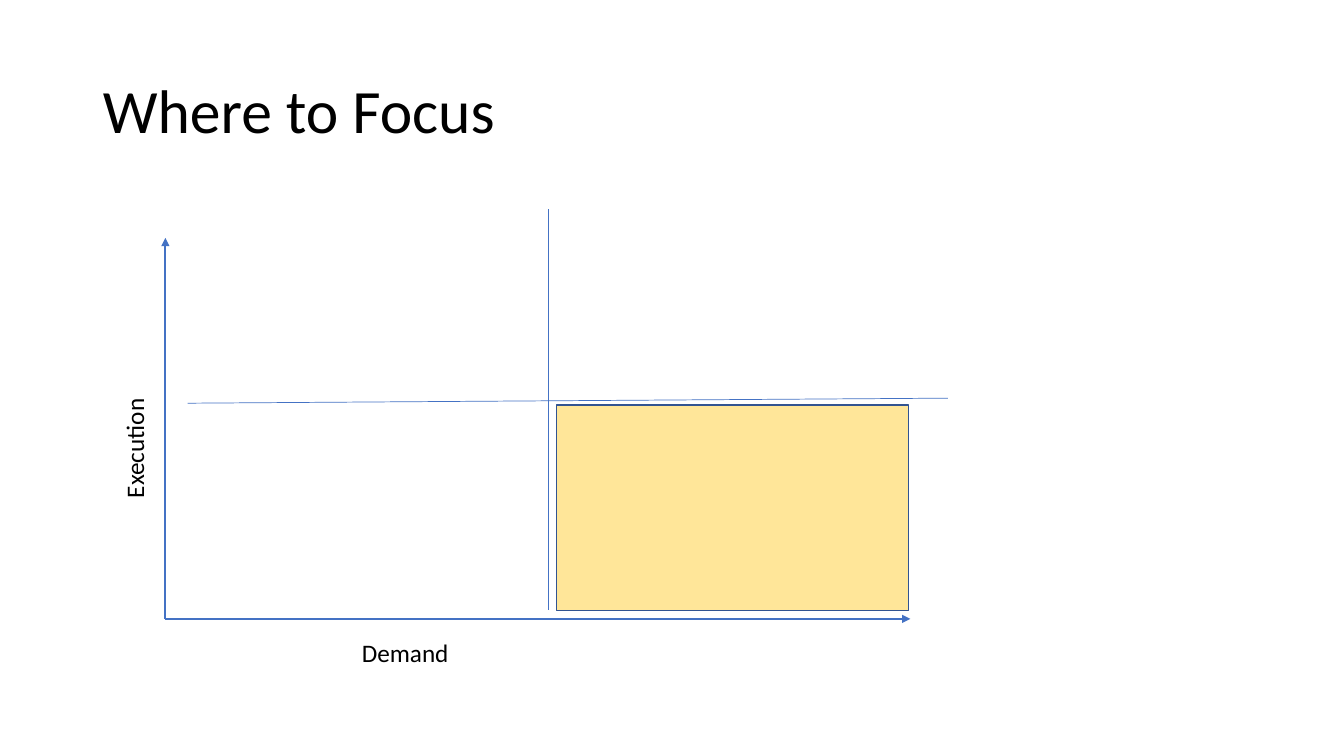
from lxml import etree
from pptx import Presentation
from pptx.dml.color import RGBColor
from pptx.enum.shapes import MSO_CONNECTOR, MSO_SHAPE
from pptx.enum.text import MSO_ANCHOR, PP_ALIGN
from pptx.oxml.ns import qn
from pptx.util import Inches, Pt

STRAIGHT = MSO_CONNECTOR.STRAIGHT
RECTANGLE = MSO_SHAPE.RECTANGLE
MIDDLE = MSO_ANCHOR.MIDDLE
LEFT = PP_ALIGN.LEFT

BLACK = RGBColor(0x00, 0x00, 0x00)
BLUE = RGBColor(0x44, 0x72, 0xC4)
DARK_BLUE = RGBColor(0x32, 0x54, 0x91)
YELLOW = RGBColor(0xFF, 0xE6, 0x99)
FONT = "Calibri"

# Chart frame, in inches
AXIS_X, AXIS_Y = 1.64, 6.14
AXIS_RIGHT, AXIS_TOP = 9.03, 2.36
DIVIDER_X, DIVIDER_Y = 5.44, 4.0
GAP = 0.08
LABEL_WIDTH, LABEL_HEIGHT = 3.18, 0.4


def style_text(paragraph, size):
    paragraph.alignment = LEFT
    paragraph.font.name = FONT
    paragraph.font.size = Pt(size)
    paragraph.font.color.rgb = BLACK


prs = Presentation()
prs.slide_width = Inches(13.33)
prs.slide_height = Inches(7.5)
slide = prs.slides.add_slide(prs.slide_layouts[5])

title = slide.shapes.title
title.left, title.top = Inches(0.92), Inches(0.4)
title.width, title.height = Inches(11.5), Inches(1.45)
title.text_frame.text = "Where to Focus"
title.text_frame.vertical_anchor = MIDDLE
title.text_frame.paragraphs[0].line_spacing = 0.9
style_text(title.text_frame.paragraphs[0], 44)

# Axes carry arrowheads; the thin quadrant dividers do not
for x1, y1, x2, y2, weight, has_arrow in (
    (AXIS_X, AXIS_Y, AXIS_RIGHT, AXIS_Y, 1.5, True),
    (AXIS_X, AXIS_Y, AXIS_X, AXIS_TOP, 1.5, True),
    (DIVIDER_X, 6.05, DIVIDER_X, 2.07, 0.5, False),
    (1.86, DIVIDER_Y, 9.4, 3.95, 0.5, False),
):
    line = slide.shapes.add_connector(
        STRAIGHT, Inches(x1), Inches(y1), Inches(x2), Inches(y2))
    line.line.color.rgb = BLUE
    line.line.width = Pt(weight)
    if has_arrow:
        etree.SubElement(line.line._get_or_add_ln(), qn("a:tailEnd"), type="triangle")
    etree.SubElement(line._element.spPr, qn("a:effectLst"))

for axis_name, left, top, rotation in (
    ("Demand", 3.49, 6.27, 0),
    ("Execution", -0.26, 3.25, 270),
):
    label = slide.shapes.add_textbox(
        Inches(left), Inches(top), Inches(LABEL_WIDTH), Inches(LABEL_HEIGHT))
    label.rotation = rotation
    label.text_frame.word_wrap = True
    label.text_frame.text = axis_name
    style_text(label.text_frame.paragraphs[0], 18)

focus_left = DIVIDER_X + GAP
focus_top = 4.02
focus_area = slide.shapes.add_shape(
    RECTANGLE, Inches(focus_left), Inches(focus_top),
    Inches(AXIS_RIGHT - 0.02 - focus_left), Inches(AXIS_Y - GAP - focus_top))
focus_area.shadow.inherit = False
focus_area.fill.solid()
focus_area.fill.fore_color.rgb = YELLOW
focus_area.line.color.rgb = DARK_BLUE
focus_area.line.width = Pt(1)

prs.save("out.pptx")
